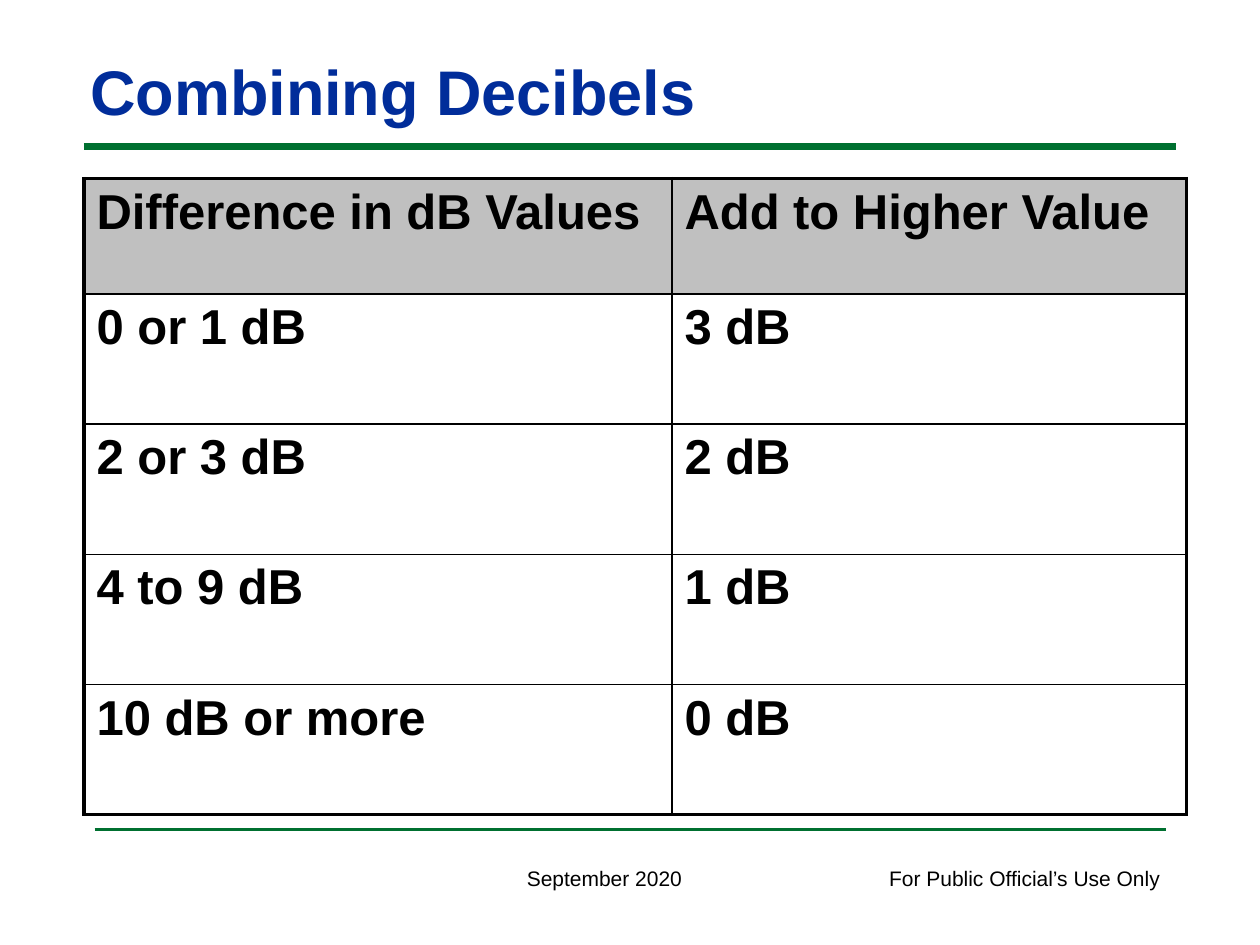
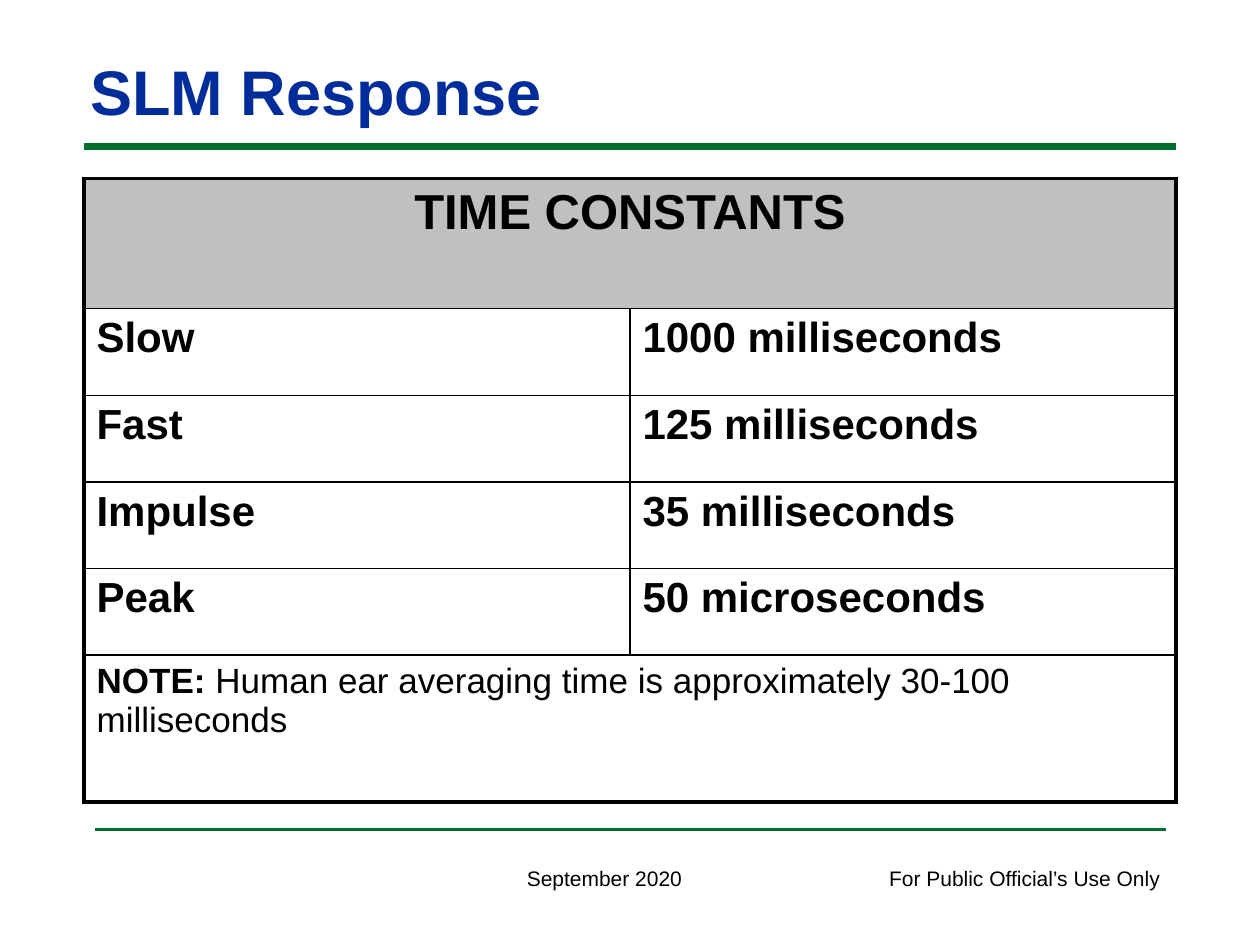
from dataclasses import dataclass

from lxml.etree import SubElement
from pptx import Presentation
from pptx.dml.color import RGBColor
from pptx.enum.text import MSO_ANCHOR, PP_ALIGN
from pptx.oxml.ns import qn
from pptx.util import Inches, Pt


@dataclass(frozen=True)
class Theme:
    font: str = "Arial"
    title_color: str = "012D9A"
    rule_color: str = "007030"
    text_color: str = "000000"
    header_fill: str = "C0C0C0"
    title_size: int = 36
    header_size: int = 28
    entry_size: int = 24
    note_size: int = 20
    footer_size: int = 12
    frame_width: float = 2.25
    grid_width: float = 1


THEME = Theme()
LEFT, TABLE_TOP = 8, 17
HEADER_ROW = 0


def units(count):
    return Inches(count / 12)


def add_span(para, text, size, color=THEME.text_color, bold=False):
    span = para.add_run()
    span.text = text
    span.font.name = THEME.font
    span.font.size = Pt(size)
    span.font.bold = bold
    span.font.color.rgb = RGBColor.from_string(color)


def add_rule(page, start, end, row, width):
    rule = page.shapes.add_connector(1, units(start), units(row), units(end), units(row))
    rule.line.color.rgb = RGBColor.from_string(THEME.rule_color)
    rule.line.width = Pt(width)
    SubElement(rule._element.spPr, qn("a:effectLst"))


def add_footer(page, column, width, text):
    box = page.shapes.add_textbox(units(column), units(81.8), units(width), units(3.6))
    box.text_frame.word_wrap = False
    add_span(box.text_frame.paragraphs[0], text, THEME.footer_size)


def set_title(page, text):
    title = page.shapes.title
    title.left, title.top = units(LEFT), units(5)
    title.width, title.height = units(108), units(7.2)
    frame = title.text_frame
    frame.margin_left = frame.margin_right = Inches(0.05)
    frame.margin_top = frame.margin_bottom = 0
    frame.vertical_anchor = MSO_ANCHOR.MIDDLE
    frame.word_wrap = True
    para = frame.paragraphs[0]
    para.alignment = PP_ALIGN.LEFT
    add_span(para, text, THEME.title_size, THEME.title_color, bold=True)


def add_page(deck, title):
    page = deck.slides.add_slide(deck.slide_layouts[5])
    add_rule(page, LEFT, 112, 14, 4)
    add_rule(page, 9, 111, 79, 2)
    add_footer(page, 83.5, 28.4, "For Public Official’s Use Only")
    add_footer(page, 49, 17.3, "September 2020")
    set_title(page, title)
    return page


def set_borders(cell, outer_edges):
    properties = cell._tc.get_or_add_tcPr()
    for edge, is_outer in outer_edges.items():
        width = THEME.frame_width if is_outer else THEME.grid_width
        line = SubElement(properties, qn(f"a:ln{edge}"), w=str(Pt(width)))
        fill = SubElement(line, qn("a:solidFill"))
        SubElement(fill, qn("a:srgbClr"), val=THEME.text_color)


def add_table(page, widths, heights, rows, sizes):
    frame = page.shapes.add_table(
        len(rows), len(widths), units(LEFT), units(TABLE_TOP),
        units(sum(widths)), units(sum(heights)))
    table = frame.table
    table.first_row = table.horz_banding = False
    for column, width in zip(table.columns, widths):
        column.width = units(width)
    last_row, last_column = len(rows) - 1, len(widths) - 1
    for index, (entries, height, size) in enumerate(zip(rows, heights, sizes)):
        table.rows[index].height = units(height)
        is_merged = len(entries) < len(widths)
        if is_merged:
            table.cell(index, 0).merge(table.cell(index, last_column))
        for position in range(len(widths)):
            cell = table.cell(index, position)
            edges = {"L": position == 0, "R": is_merged or position == last_column,
                     "T": index == 0, "B": index == last_row}
            if cell.is_spanned:
                del edges["L"]
            set_borders(cell, edges)
            if index == HEADER_ROW:
                cell.fill.solid()
                cell.fill.fore_color.rgb = RGBColor.from_string(THEME.header_fill)
            else:
                cell.fill.background()
        for position, entry in enumerate(entries):
            para = table.cell(index, position).text_frame.paragraphs[0]
            if is_merged and index == HEADER_ROW:
                para.alignment = PP_ALIGN.CENTER
            spans = [(entry, True)] if isinstance(entry, str) else entry
            for text, bold in spans:
                add_span(para, text, size, bold=bold)


def add_decibel_page(deck):
    page = add_page(deck, "Combining Decibels")
    rows = [
        ["Difference in dB Values", "Add to Higher Value"],
        ["0 or 1 dB", "3 dB"],
        ["2 or 3 dB", "2 dB"],
        ["4 to 9 dB", "1 dB"],
        ["10 dB or more", "0 dB"],
    ]
    add_table(page, [56, 49], [11] + [12.4] * 4, rows, [THEME.header_size] * 5)


def add_response_page(deck):
    page = add_page(deck, "SLM Response")
    note = [("NOTE:", True),
            (" Human ear averaging time is approximately 30-100 milliseconds", False)]
    rows = [
        ["TIME CONSTANTS"],
        ["Slow", "1000 milliseconds"],
        ["Fast", "125 milliseconds"],
        ["Impulse", "35 milliseconds"],
        ["Peak", "50 microseconds"],
        [note],
    ]
    sizes = [THEME.header_size] + [THEME.entry_size] * 4 + [THEME.note_size]
    add_table(page, [52, 52], [12.4] + [8.25] * 4 + [14], rows, sizes)


def main():
    deck = Presentation()
    deck.slide_width, deck.slide_height = units(120), units(90)
    add_decibel_page(deck)
    add_response_page(deck)
    deck.save("out.pptx")


if __name__ == "__main__":
    main()
